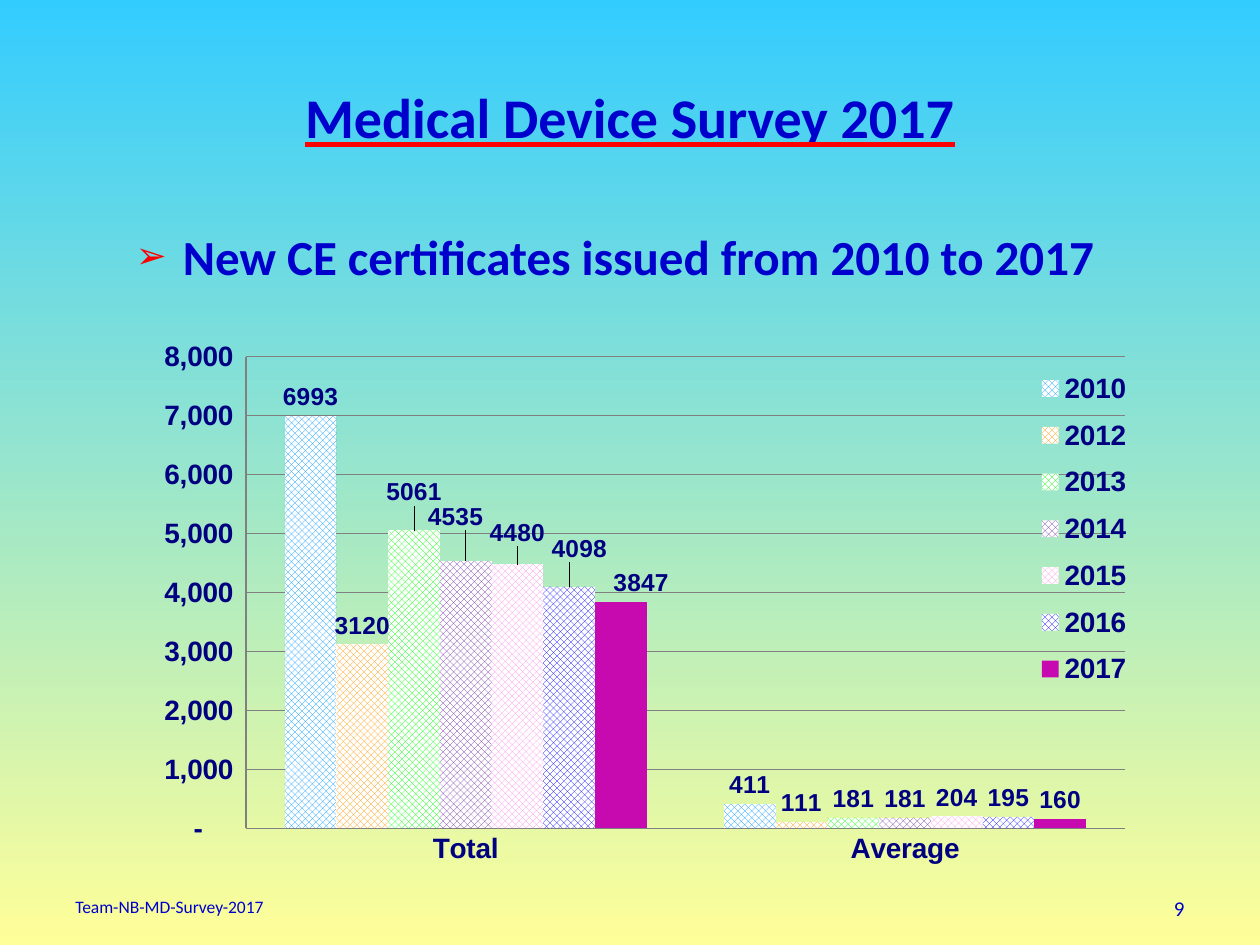
"""Build the survey slide on new CE certificates issued from 2010 to 2017."""
from dataclasses import dataclass
from typing import Optional

from lxml import etree
from pptx import Presentation
from pptx import util as u
from pptx.chart import data as chart_data
from pptx.dml.color import RGBColor
from pptx.enum import chart as ch, dml, text
from pptx.oxml import ns

COLORS = {
    "sky": "33CCFF", "sand": "FFFF99", "blue": "0000CC", "red": "FF0000",
    "navy": "000080", "grid": "808080", "white": "FFFFFF",
}


@dataclass
class Year:
    name: str
    total: int
    average: int
    color: str
    patterned: bool = True
    label_shift: Optional[tuple[float, float]] = None


YEARS = [
    Year("2010", 6993, 411, "0099FF"),
    Year("2012", 3120, 111, "FF9900"),
    Year("2013", 5061, 181, "00FF00", label_shift=(0, -0.03)),
    Year("2014", 4535, 181, "7030A0", label_shift=(-0.01, -0.04)),
    Year("2015", 4480, 204, "FD91E8", label_shift=(0, -0.02)),
    Year("2016", 4098, 195, "0101FF", label_shift=(0.01, -0.03)),
    Year("2017", 3847, 160, "C709B0", patterned=False, label_shift=(0.02, 0)),
]


def rgb(name: str) -> RGBColor:
    """Look up a colour by name, or read it as hex."""
    return RGBColor.from_string(COLORS.get(name, name))


def place(shape, left: float, top: float, width: float, height: float) -> None:
    """Position a shape in centimetres."""
    shape.left, shape.top = u.Cm(left), u.Cm(top)
    shape.width, shape.height = u.Cm(width), u.Cm(height)


def sub(parent, tag: str, **attributes: str):
    """Append a namespaced child element."""
    return etree.SubElement(parent, ns.qn(tag), attributes)


def write(shape, content: str, *, size: float, bold: bool = False,
          align=text.PP_ALIGN.LEFT, anchor=text.MSO_ANCHOR.TOP,
          bullet: Optional[str] = None, underline: Optional[str] = None) -> None:
    """Fill a shape with one formatted paragraph."""
    frame = shape.text_frame
    frame.word_wrap = True
    frame.auto_size = text.MSO_AUTO_SIZE.NONE
    frame.vertical_anchor = anchor
    paragraph = frame.paragraphs[0]
    paragraph.alignment = align
    if bullet:
        properties = paragraph._p.get_or_add_pPr()
        properties.set("marL", str(u.Cm(0.95)))
        properties.set("indent", str(-u.Cm(0.95)))
        sub(sub(properties, "a:buClr"), "a:srgbClr", val=COLORS["red"])
        sub(properties, "a:buSzPct", val="75000")
        sub(properties, "a:buFont", typeface="Wingdings 2")
        properties[-1].set("typeface", "Arial")
        sub(properties, "a:buChar", char=bullet)
    run = paragraph.add_run()
    run.text = content
    font = run.font
    font.name, font.size, font.bold = "Calibri", u.Pt(size), bold
    font.color.rgb = rgb("blue")
    if underline:
        font.underline = True
        properties = run._r.get_or_add_rPr()
        line_fill = sub(properties, "a:uFill")
        sub(sub(line_fill, "a:solidFill"), "a:srgbClr", val=COLORS[underline])
        properties.find(ns.qn("a:latin")).addprevious(line_fill)


def add_text(slide, box: tuple[float, float, float, float], content: str, **style) -> None:
    """Add a text box with formatted text."""
    write(slide.shapes.add_textbox(*map(u.Cm, box)), content, **style)


def style_font(font, size: float) -> None:
    """Apply the bold navy chart lettering."""
    font.name, font.size, font.bold = "Arial", u.Pt(size), True
    font.color.rgb = rgb("navy")


def manual_layout(inner: bool = False, edge: bool = True, **values: float):
    """Make a chart layout element from fractions of the chart area."""
    layout = etree.Element(ns.qn("c:layout"))
    manual = sub(layout, "c:manualLayout")
    if inner:
        sub(manual, "c:layoutTarget", val="inner")
    if edge:
        sub(manual, "c:xMode", val="edge")
        sub(manual, "c:yMode", val="edge")
    for key, value in values.items():
        sub(manual, f"c:{key}", val=str(value))
    return layout


def style_series(series, year: Year) -> None:
    """Colour the bars of one year and set their value labels."""
    fill = series.format.fill
    if year.patterned:
        fill.patterned()
        fill.pattern = dml.MSO_PATTERN.LARGE_CHECKER_BOARD
        fill.fore_color.rgb, fill.back_color.rgb = rgb(year.color), rgb("white")
    else:
        fill.solid()
        fill.fore_color.rgb = rgb(year.color)
    series.invert_if_negative = False
    labels = series.data_labels
    labels.show_value = True
    labels.number_format, labels.number_format_is_linked = "0", False
    labels.position = ch.XL_LABEL_POSITION.OUTSIDE_END
    style_font(labels.font, 14)
    if year.label_shift:
        total_label = series.points[0].data_label
        total_label.position = ch.XL_LABEL_POSITION.OUTSIDE_END
        style_font(total_label.font, 14)
        x, y = year.label_shift
        index = labels._element.find(f"{ns.qn('c:dLbl')}/{ns.qn('c:idx')}")
        index.addnext(manual_layout(edge=False, x=x, y=y))


def style_axis(axis) -> None:
    """Give an axis grey lines, no ticks and navy labels."""
    axis.major_tick_mark = axis.minor_tick_mark = ch.XL_TICK_MARK.NONE
    axis.format.line.color.rgb = rgb("grid")
    style_font(axis.tick_labels.font, 16)


def add_certificate_chart(slide) -> None:
    """Add the clustered columns of totals and averages by year."""
    certificates = chart_data.CategoryChartData()
    certificates.categories = ["Total", "Average"]
    for year in YEARS:
        certificates.add_series(year.name, (year.total, year.average))
    box = map(u.Cm, (2.9, 4.88, 20.6, 12.85))
    chart = slide.shapes.add_chart(
        ch.XL_CHART_TYPE.COLUMN_CLUSTERED, *box, certificates).chart
    chart.has_title = False
    style_font(chart.font, 10)

    columns = chart.plots[0]
    columns.gap_width, columns.overlap, columns.vary_by_categories = 150, 0, False
    for series, year in zip(columns.series, YEARS):
        style_series(series, year)

    style_axis(chart.category_axis)
    counts = chart.value_axis
    style_axis(counts)
    counts.minimum_scale, counts.maximum_scale, counts.major_unit = 0, 8000, 1000
    counts.has_major_gridlines = True
    counts.major_gridlines.format.line.color.rgb = rgb("grid")
    counts.tick_labels.number_format = '_(* #,##0_);_(* (#,##0);_(* "-"??_);_(@_)'
    counts.tick_labels.number_format_is_linked = False

    plot_area = chart._chartSpace.find(f".//{ns.qn('c:plotArea')}")
    for automatic in plot_area.findall(ns.qn("c:layout")):
        plot_area.remove(automatic)
    plot_area.insert(0, manual_layout(inner=True, x=0.1, y=0.18, w=0.86, h=0.74))

    chart.has_legend = True
    legend = chart.legend
    legend.position = ch.XL_LEGEND_POSITION.RIGHT
    legend.include_in_layout = True
    style_font(legend.font, 16)
    for automatic in legend._element.findall(ns.qn("c:layout")):
        legend._element.remove(automatic)
    legend._element.find(ns.qn("c:overlay")).addprevious(
        manual_layout(x=0.87, y=0.18, w=0.1, h=0.54))


def main() -> None:
    """Create and save the presentation."""
    deck = Presentation()
    deck.slide_width, deck.slide_height = u.Cm(25.4), u.Cm(19.05)
    slide = deck.slides.add_slide(deck.slide_layouts[5])
    backdrop = slide.background.fill
    backdrop.gradient()
    backdrop.gradient_angle = 270
    for stop, color in zip(backdrop.gradient_stops, ("sky", "sand")):
        stop.color.rgb = rgb(color)

    place(slide.shapes.title, 1.27, 0.76, 22.86, 3.18)
    write(slide.shapes.title, "Medical Device Survey 2017", size=32, bold=True,
          align=text.PP_ALIGN.CENTER, anchor=text.MSO_ANCHOR.MIDDLE, underline="red")
    add_text(slide, (18.21, 17.93, 5.92, 0.74), "9", size=12, align=text.PP_ALIGN.RIGHT)
    add_text(slide, (2.49, 4.45, 22.61, 2.08),
             "New CE certificates issued from 2010 to 2017", size=28, bold=True, bullet="➢")
    add_text(slide, (1.27, 17.93, 8.05, 0.74), "Team-NB-MD-Survey-2017", size=10)
    add_certificate_chart(slide)
    deck.save("out.pptx")


if __name__ == "__main__":
    main()
